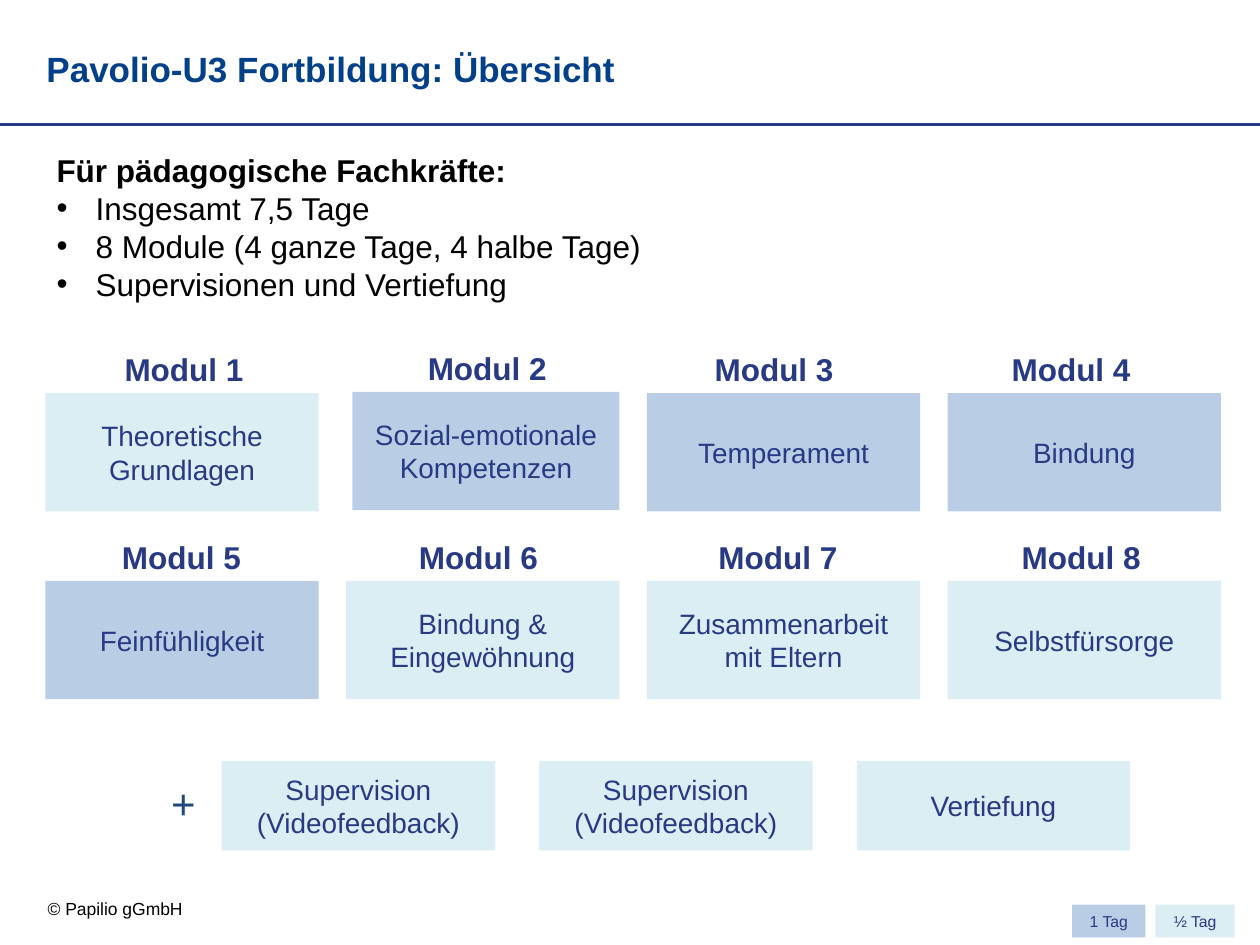
from dataclasses import dataclass

from lxml import etree
from pptx import Presentation
from pptx import util as u
from pptx.dml.color import RGBColor
from pptx.enum import shapes, text
from pptx.oxml.ns import qn

WIDE, HIGH = 10, 7.5
NAVY, BLUE, BLACK = "283A84", "024089", "000000"
FULL, HALF = "B9CDE5", "DBEEF4"
LEFT, STEP, BOX_W, BOX_H = 0.36, 2.387, 2.17, 0.94
TOP, ROW = 3.12, 1.49
LABEL_W, LABEL_H, LABEL_UP = 1.16, 0.4, 0.39


@dataclass
class Module:
    name: str
    fill: str
    label: float  # left edge of the heading within its column
    inset: float = 0
    lift: float = 0


@dataclass
class Style:
    size: float
    color: str = NAVY
    bold: bool = False


MODULES = [
    Module("Theoretische Grundlagen", HALF, 0.53),
    Module("Sozial-emotionale Kompetenzen", FULL, 0.55, 0.05, 0.01),
    Module("Temperament", FULL, 0.44),
    Module("Bindung", FULL, 0.41),
    Module("Feinfühligkeit", FULL, 0.51),
    Module("Bindung & Eingewöhnung", HALF, 0.48),
    Module("Zusammenarbeit mit Eltern", HALF, 0.47),
    Module("Selbstfürsorge", HALF, 0.49),
]
EXTRAS = ["Supervision (Videofeedback)", "Supervision\n(Videofeedback)", "Vertiefung"]
POINTS = [
    "Insgesamt 7,5 Tage",
    "8 Module (4 ganze Tage, 4 halbe Tage)",
    "Supervisionen und Vertiefung",
]

deck = Presentation()
deck.slide_width, deck.slide_height = u.Inches(WIDE), u.Inches(HIGH)
slide = deck.slides.add_slide(deck.slide_layouts[6])


def rgb(code: str) -> RGBColor:
    return RGBColor.from_string(code)


def style(par, look: Style) -> None:
    font = par.font
    font.name, font.size, font.bold = "Arial", u.Pt(look.size), look.bold
    font.color.rgb = rgb(look.color)


def label(words: str, x: float, y: float, w: float, h: float, look: Style, wrap: bool = True):
    frame = slide.shapes.add_textbox(*map(u.Inches, (x, y, w, h))).text_frame
    frame.word_wrap = wrap
    frame.text = words
    for par in frame.paragraphs:
        style(par, look)
    return frame


def block(words: str, x: float, y: float, w: float, h: float, fill: str, size: float = 16) -> None:
    box = slide.shapes.add_shape(shapes.MSO_SHAPE.RECTANGLE, *map(u.Inches, (x, y, w, h)))
    box.shadow.inherit = False
    box.fill.solid()
    box.fill.fore_color.rgb = rgb(fill)
    box.line.fill.background()
    frame = box.text_frame
    frame.word_wrap = True
    frame.vertical_anchor = text.MSO_ANCHOR.MIDDLE
    frame.text = words
    for par in frame.paragraphs:
        par.alignment = text.PP_ALIGN.CENTER
        style(par, Style(size))


def bullet(par) -> None:
    props = par._p.get_or_add_pPr()
    indent = u.Inches(0.31)
    props.set("marL", str(indent))
    props.set("indent", str(-indent))
    etree.SubElement(props, qn("a:buFont")).set("typeface", "Arial")
    etree.SubElement(props, qn("a:buChar")).set("char", "•")


def rule(y: float) -> None:
    line = slide.shapes.add_connector(
        shapes.MSO_CONNECTOR.STRAIGHT, 0, u.Inches(y), u.Inches(WIDE), u.Inches(y))
    line.line.color.rgb = rgb(NAVY)
    line.line.width = u.Pt(1.5)
    etree.SubElement(line._element.spPr, qn("a:effectLst"))


def module(index: int, item: Module) -> None:
    row, col = divmod(index, 4)
    x, y = LEFT + col * STEP, TOP + row * ROW - item.lift
    block(item.name, x + item.inset, y, BOX_W - item.inset, BOX_H, item.fill)
    label(f"Modul {index + 1}", x + item.label, y - LABEL_UP, LABEL_W, LABEL_H,
          Style(18, bold=True), wrap=False)


def intro() -> None:
    frame = label("Für pädagogische Fachkräfte:", 0.35, 1.15, 8.58, 1.31,
                  Style(18, BLACK, True))
    for point in POINTS:
        par = frame.add_paragraph()
        par.text = point
        bullet(par)
        style(par, Style(18, BLACK))


def main() -> None:
    rule(0.99)
    label("© Papilio gGmbH", 0.28, 7.08, 2.17, 0.27, Style(10, BLACK))
    title = label("Pavolio-U3 Fortbildung: Übersicht", 0.27, 0.32, 7.61, 0.44,
                  Style(20, BLUE, True))
    title.vertical_anchor = text.MSO_ANCHOR.MIDDLE
    intro()
    for index, item in enumerate(MODULES):
        module(index, item)
    label("+", 1.26, 6.12, 0.39, 0.5, Style(24, "1F497D"))
    for col, name in enumerate(EXTRAS):
        block(name, 1.76 + col * 2.52, 6.04, BOX_W, 0.71, HALF)
    block("1 Tag", 8.51, 7.18, 0.58, 0.26, FULL, 9)
    block("½ Tag", 9.17, 7.18, 0.63, 0.26, HALF, 9)
    deck.save("out.pptx")


if __name__ == "__main__":
    main()
